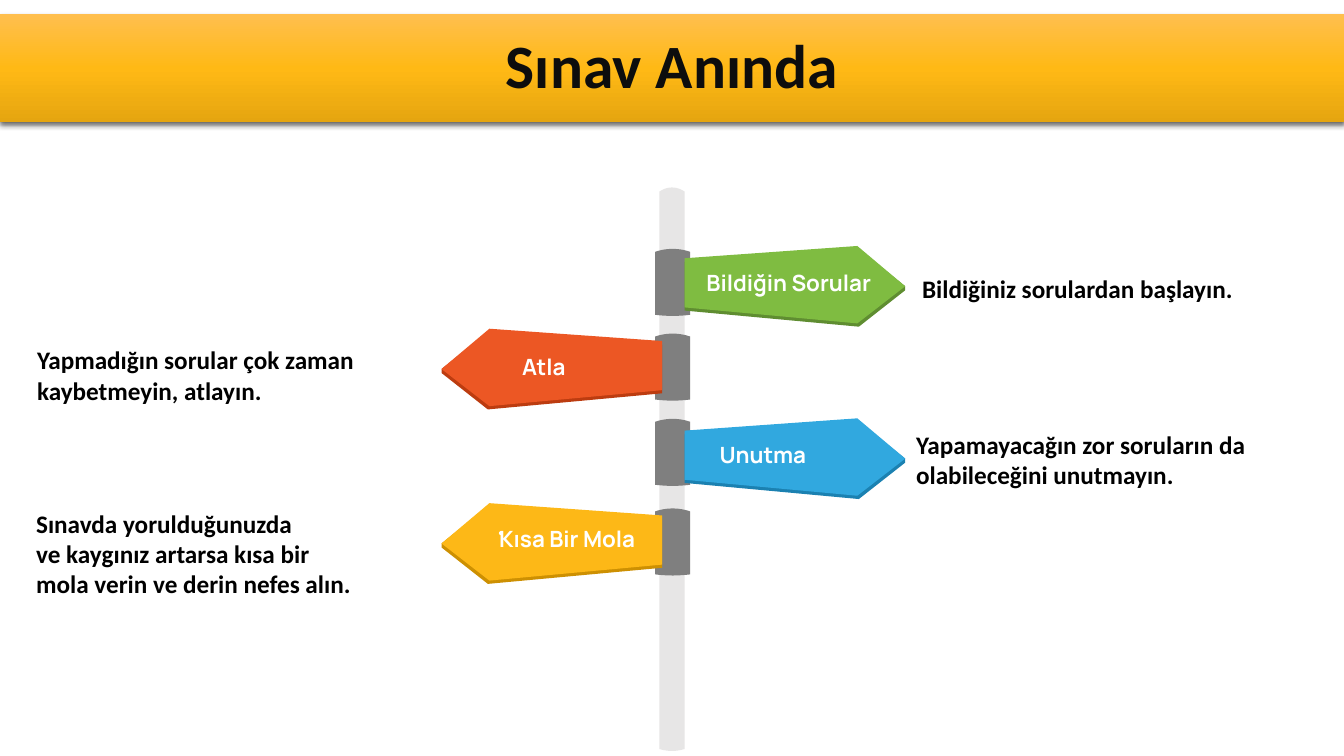
import copy
import pptx
import pptx.dml.color
import pptx.enum.shapes
import pptx.enum.text
import pptx.oxml
import pptx.oxml.ns
import pptx.util

Pt = pptx.util.Pt
RGBColor = pptx.dml.color.RGBColor
ALIGN = pptx.enum.text.PP_ALIGN
SHAPE = pptx.enum.shapes.MSO_SHAPE

WHITE = RGBColor(0xFF, 0xFF, 0xFF)
BLACK = RGBColor(0x00, 0x00, 0x00)
TITLE_INK = RGBColor(0x0D, 0x0D, 0x0D)
POLE_GREY = RGBColor(0xE7, 0xE6, 0xE6)
COLLAR_GREY = RGBColor(0x7F, 0x7F, 0x7F)
GREEN, DARK_GREEN = RGBColor(0x7F, 0xBC, 0x41), RGBColor(0x5F, 0x8D, 0x31)
ORANGE, DARK_ORANGE = RGBColor(0xEC, 0x57, 0x24), RGBColor(0xBC, 0x3C, 0x10)
BLUE, DARK_BLUE = RGBColor(0x31, 0xA8, 0xDF), RGBColor(0x1B, 0x81, 0xB1)
YELLOW, DARK_YELLOW = RGBColor(0xFD, 0xB8, 0x17), RGBColor(0xCD, 0x90, 0x02)
BANNER_STOPS = [(0, RGBColor(0xFF, 0xBF, 0x4E)), (0.5, RGBColor(0xFF, 0xB9, 0x15)),
                (1, RGBColor(0xE5, 0xA5, 0x10))]

TITLE_FONT = {"name": "Calibri", "size": Pt(44), "bold": True}
ADVICE_FONT = {"name": "Calibri", "size": Pt(18), "bold": True}
SIGN_FONT = {"name": "Manrope", "size": Pt(16), "bold": True}

deck = pptx.Presentation()
deck.slide_width, deck.slide_height = Pt(960), Pt(540)
slide = deck.slides.add_slide(deck.slide_layouts[6])


def add_outline(points, color):
    corners = [(Pt(x), Pt(y)) for x, y in points]
    builder = slide.shapes.build_freeform(*corners[0], scale=1.0)
    builder.add_line_segments(corners[1:], close=True)
    outline = builder.convert_to_shape()
    outline.fill.solid()
    outline.fill.fore_color.rgb = color
    outline.line.fill.background()
    outline.shadow.inherit = False


def write_lines(frame, lines, font_format, color, align):
    for number, line in enumerate(lines):
        paragraph = frame.paragraphs[0] if number == 0 else frame.add_paragraph()
        paragraph.alignment = align
        run = paragraph.add_run()
        run.text = line
        for attribute, value in font_format.items():
            setattr(run.font, attribute, value)
        run.font.color.rgb = color


# Pole and its four collars, each a bar with rounded ends:
# left, width, top edge, bottom edge, top bulge, bottom bulge, colour
bars = [(471, 18, 136.8, 535, 2.9, 1.4, POLE_GREY)]
bars += [(468, 25, top, top + 45, 2.1, 0.8, COLLAR_GREY)
         for top in (179.9, 240.4, 301.3, 365.3)]
arc = [step / 6 for step in range(-6, 7)]
for left, width, top, bottom, top_bulge, bottom_bulge, color in bars:
    middle = left + width / 2
    upper = [(middle + t * width / 2, top - top_bulge * (1 - t * t)) for t in arc]
    lower = [(middle + t * width / 2, bottom + bottom_bulge * (1 - t * t)) for t in arc]
    add_outline(upper + lower[::-1], color)

# Signs: distance from the joint, distance from the top of the face
FACE = [(0, 8.8), (123.4, 0), (157.6, 28.8), (123.4, 55.3), (0, 43.9)]
UNDERSIDE = [(0, 11.5), (124.5, 2.3), (157.6, 28.8), (157.6, 31.7), (124.5, 57.7), (0, 46.2)]
RIGHT, LEFT = (489, 1), (473, -1)
signs = [
    # side, top, face, underside, label, label left, top and width
    (RIGHT, 175.7, GREEN, DARK_GREEN, "Bildiğin Sorular", 497.5, 188.6, 134),
    (LEFT, 234.8, ORANGE, DARK_ORANGE, "Atla", 365, 248.4, 46),
    (RIGHT, 298.8, BLUE, DARK_BLUE, "Unutma", 506.9, 311.8, 77),
    (LEFT, 359.4, YELLOW, DARK_YELLOW, "Kısa Bir Mola", 346.3, 371.5, 114.5),
]
# Texts: left, top, width, height, wraps, lines, font, colour, alignment
texts = [
    (651.6, 191.5, 283.7, 29, True, ["Bildiğiniz sorulardan başlayın."]),
    (647.3, 303.1, 255.6, 51, False,
     ["Yapamayacağın zor soruların da", "olabileceğini unutmayın."]),
    (19.4, 242.6, 247, 51, False, ["Yapmadığın sorular çok zaman", "kaybetmeyin, atlayın."]),
    (18.7, 359.3, 290, 72.7, True,
     ["Sınavda yorulduğunuzda", "ve kaygınız artarsa kısa bir",
      "mola verin ve derin nefes alın."]),
]
texts = [text + (ADVICE_FONT, BLACK, ALIGN.LEFT) for text in texts]

for (joint, direction), top, face, underside, label, label_left, label_top, label_width in signs:
    for profile, color in ((UNDERSIDE, underside), (FACE, face)):
        add_outline([(joint + direction * dx, top + dy) for dx, dy in profile], color)
    align = ALIGN.LEFT if direction > 0 else ALIGN.RIGHT
    texts.append((label_left, label_top, label_width, 26.6, False, [label],
                  SIGN_FONT, WHITE, align))

# Sign labels and advice beside the signs
for left, top, width, height, wraps, lines, font_format, color, align in texts:
    box = slide.shapes.add_textbox(Pt(left), Pt(top), Pt(width), Pt(height))
    box.text_frame.word_wrap = wraps
    box.text_frame.auto_size = pptx.enum.text.MSO_AUTO_SIZE.SHAPE_TO_FIT_TEXT
    write_lines(box.text_frame, lines, font_format, color, align)

# Small dot on the yellow sign
dot = slide.shapes.add_shape(SHAPE.OVAL, Pt(356.4), Pt(379.4), Pt(2.9), Pt(2.9))
dot.fill.solid()
dot.fill.fore_color.rgb = WHITE
dot.line.fill.background()
dot.shadow.inherit = False

# Title banner with a three-stop gradient and a soft shadow
banner = slide.shapes.add_shape(SHAPE.RECTANGLE, 0, Pt(10.3), Pt(960), Pt(77))
banner.line.fill.background()
banner.fill.gradient()
banner.fill.gradient_angle = 270
stop_list = banner.element.find(".//" + pptx.oxml.ns.qn("a:gsLst"))
stop_list.append(copy.deepcopy(stop_list[-1]))
for stop, (position, color) in zip(banner.fill.gradient_stops, BANNER_STOPS):
    stop.position = position
    stop.color.rgb = color
banner.shadow.inherit = False
effects = banner.element.find(".//" + pptx.oxml.ns.qn("a:effectLst"))
effects.append(pptx.oxml.parse_xml(
    f'<a:outerShdw {pptx.oxml.ns.nsdecls("a")} blurRad="{Pt(4.5)}" dist="{Pt(1.5)}" '
    'dir="5400000" algn="ctr" rotWithShape="0">'
    '<a:srgbClr val="000000"><a:alpha val="63000"/></a:srgbClr></a:outerShdw>'))
banner.text_frame.vertical_anchor = pptx.enum.text.MSO_ANCHOR.MIDDLE
write_lines(banner.text_frame, ["Sınav Anında"], TITLE_FONT, TITLE_INK, ALIGN.CENTER)
banner.text_frame.paragraphs[0].line_spacing = 0.9

deck.save("out.pptx")
